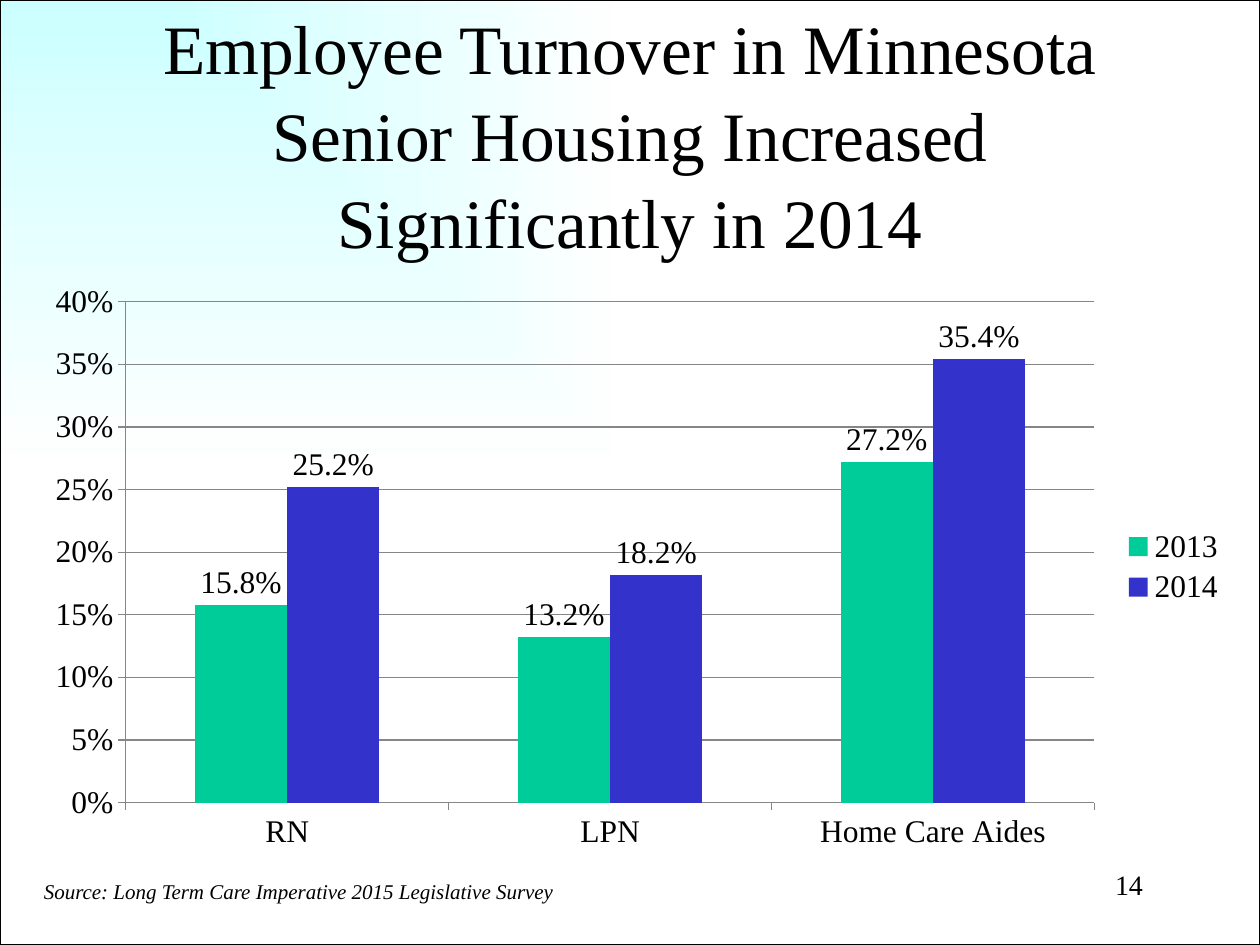
from typing import NamedTuple

from lxml.etree import SubElement
from pptx import Presentation
from pptx.chart.data import CategoryChartData
from pptx.dml.color import RGBColor
from pptx.enum.chart import XL_CHART_TYPE, XL_LABEL_POSITION, XL_LEGEND_POSITION, XL_TICK_MARK
from pptx.enum.shapes import MSO_SHAPE
from pptx.enum.text import MSO_ANCHOR, MSO_AUTO_SIZE, PP_ALIGN
from pptx.oxml.ns import qn
from pptx.util import Inches, Pt

FONT = "Times New Roman"
BLACK = RGBColor(0x00, 0x00, 0x00)
GRAY = RGBColor(0x86, 0x86, 0x86)
GREEN = RGBColor(0x00, 0xCC, 0x99)
BLUE = RGBColor(0x33, 0x33, 0xCC)
CYAN = RGBColor(0xCC, 0xFF, 0xFF)
WHITE = RGBColor(0xFF, 0xFF, 0xFF)
WIDTH, HEIGHT = Inches(10), Inches(7.5)


class Box(NamedTuple):
    """Shares of the slide's width and height."""
    x: float
    y: float
    w: float
    h: float

    def emu(self) -> tuple:
        """Return left, top, width and height in EMU."""
        return (int(WIDTH * self.x), int(HEIGHT * self.y),
                int(WIDTH * self.w), int(HEIGHT * self.h))


class Year(NamedTuple):
    """One chart series."""
    name: str
    values: tuple
    color: RGBColor


CATEGORIES = ("RN", "LPN", "Home Care Aides")
YEARS = (Year("2013", (0.158, 0.132, 0.272), GREEN),
         Year("2014", (0.252, 0.182, 0.354), BLUE))


def write(sp, text: str, *, size: float, align=PP_ALIGN.LEFT, anchor=MSO_ANCHOR.TOP,
          italic: bool = False, wrap: bool = True, spacing: float = 1.0) -> None:
    """Write one formatted paragraph into a shape."""
    tf = sp.text_frame
    tf.word_wrap, tf.auto_size, tf.vertical_anchor = wrap, MSO_AUTO_SIZE.NONE, anchor
    p = tf.paragraphs[0]
    p.alignment, p.line_spacing = align, spacing
    r = p.add_run()
    r.text = text
    r.font.name, r.font.size, r.font.italic = FONT, Pt(size), italic
    r.font.color.rgb = BLACK


def add_background(slide) -> None:
    """Draw the framed backdrop that fades from the top left corner."""
    sp = slide.shapes.add_shape(MSO_SHAPE.RECTANGLE, *Box(0, 0, 1, 1).emu())
    sp.shadow.inherit = False
    sp.line.color.rgb, sp.line.width = BLACK, Pt(0.75)
    sp.fill.gradient()
    for stop, color, pos in zip(sp.fill.gradient_stops, (CYAN, WHITE), (0, 1)):
        stop.color.rgb, stop.position = color, pos
    grad = sp.element.spPr.find(qn("a:gradFill"))
    grad.remove(grad.find(qn("a:lin")))
    route = SubElement(grad, qn("a:path"), {"path": "rect"})
    SubElement(route, qn("a:fillToRect"), {"r": "100000", "b": "100000"})
    slide.shapes._spTree.remove(sp.element)
    slide.shapes._spTree.insert(2, sp.element)


def add_turnover_chart(slide, box: Box) -> None:
    """Draw the clustered columns of turnover by role and year."""
    data = CategoryChartData(number_format="0.0%")
    data.categories = CATEGORIES
    for year in YEARS:
        data.add_series(year.name, year.values)
    chart = slide.shapes.add_chart(XL_CHART_TYPE.COLUMN_CLUSTERED, *box.emu(), data).chart
    chart.font.name, chart.font.size, chart.font.color.rgb = FONT, Pt(18), BLACK
    chart.has_title = False
    chart.has_legend = True
    chart.legend.position = XL_LEGEND_POSITION.RIGHT
    chart.legend.include_in_layout = False

    for axis in (chart.category_axis, chart.value_axis):
        axis.major_tick_mark = XL_TICK_MARK.OUTSIDE
        axis.format.line.color.rgb = GRAY
    values = chart.value_axis
    values.minimum_scale, values.maximum_scale, values.major_unit = 0, 0.4, 0.05
    values.major_gridlines.format.line.color.rgb = GRAY
    values.tick_labels.number_format = "0%"
    values.tick_labels.number_format_is_linked = False

    plot = chart.plots[0]
    plot.gap_width, plot.overlap, plot.vary_by_categories = 150, 0, False
    for series, year in zip(plot.series, YEARS):
        series.format.fill.solid()
        series.format.fill.fore_color.rgb = year.color
        labels = series.data_labels
        labels.show_value = True
        labels.number_format, labels.number_format_is_linked = "0.0%", False
        labels.position = XL_LABEL_POSITION.OUTSIDE_END


def main() -> None:
    """Build and save the turnover slide."""
    prs = Presentation()
    prs.slide_width, prs.slide_height = WIDTH, HEIGHT
    slide = prs.slides.add_slide(prs.slide_layouts[5])
    add_background(slide)

    title = slide.shapes.title
    title.left, title.top, title.width, title.height = Box(0.075, 0.056, 0.85, 0.167).emu()
    write(title, "Employee Turnover in Minnesota Senior Housing Increased Significantly in 2014",
          size=39.6, align=PP_ALIGN.CENTER, anchor=MSO_ANCHOR.MIDDLE, spacing=1.05)

    number = slide.shapes.add_textbox(*Box(0.867, 0.911, 0.058, 0.044).emu())
    write(number, "14", size=16, align=PP_ALIGN.CENTER)
    add_turnover_chart(slide, Box(0.025, 0.289, 0.958, 0.622))
    source = slide.shapes.add_textbox(*Box(0.025, 0.923, 0.443, 0.04).emu())
    write(source, "Source: Long Term Care Imperative 2015 Legislative Survey",
          size=12, italic=True, wrap=False)
    prs.save("out.pptx")


if __name__ == "__main__":
    main()
